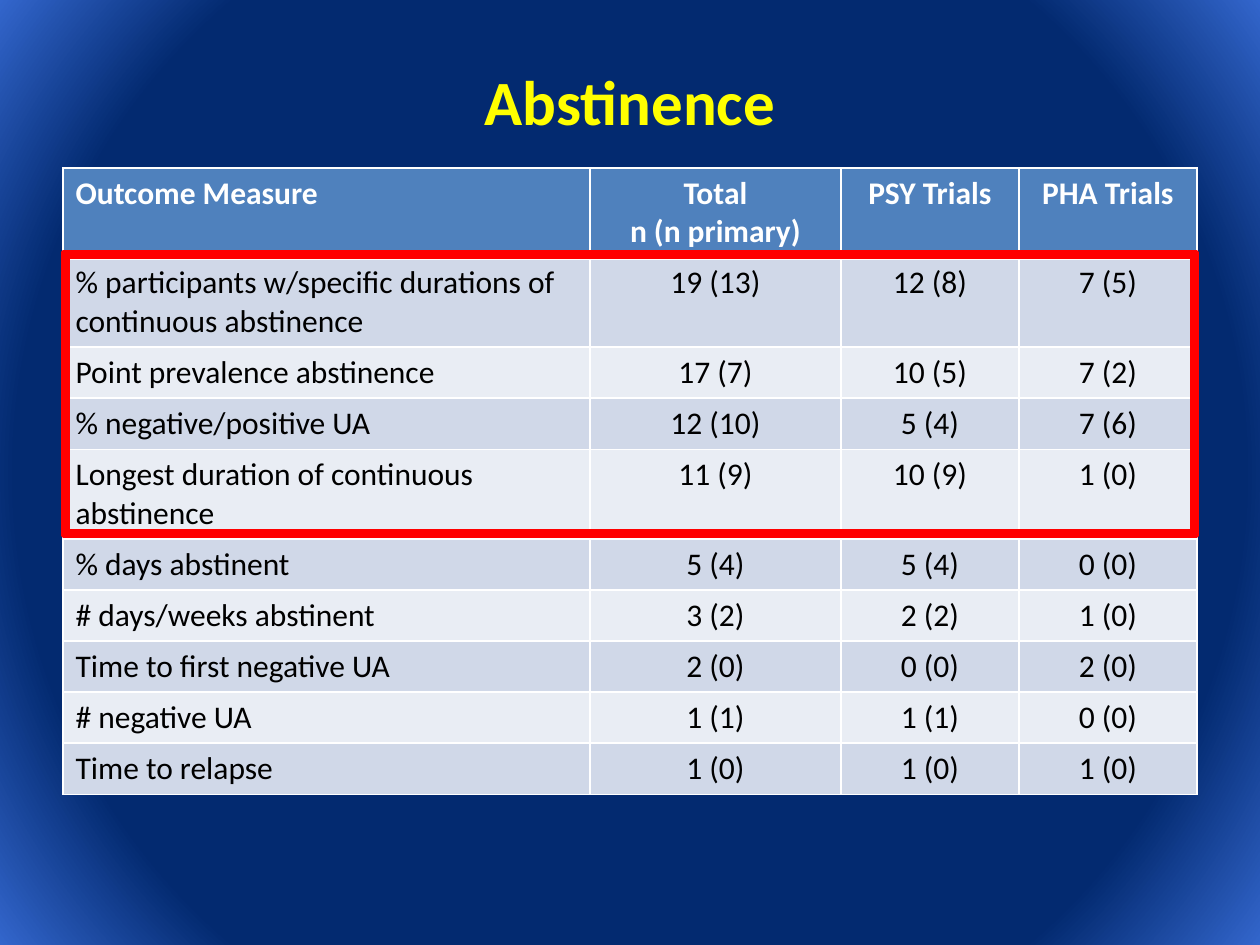
import pptx
import pptx.dml.color
import pptx.enum.dml
import pptx.enum.shapes
import pptx.enum.text
import pptx.oxml
import pptx.oxml.ns
import pptx.util

EMU_PER_PX = 914400 / 126
COLORS = {
    "navy": "032A70",
    "blue": "3366CC",
    "title": "FFFF00",
    "header": "4F81BD",
    "band_dark": "D0D8E8",
    "band_light": "E9EDF4",
    "white": "FFFFFF",
    "black": "000000",
    "highlight": "FF0000",
}
COLUMN_WIDTHS = [527, 251, 178, 178]
ROW_HEIGHT = 51
ROWS = [
    ["Outcome Measure", "Total\nn (n primary)", "PSY Trials", "PHA Trials"],
    ["% participants w/specific durations of continuous abstinence", "19 (13)", "12 (8)", "7 (5)"],
    ["Point prevalence abstinence", "17 (7)", "10 (5)", "7 (2)"],
    ["% negative/positive UA", "12 (10)", "5 (4)", "7 (6)"],
    ["Longest duration of continuous abstinence", "11 (9)", "10 (9)", "1 (0)"],
    ["% days abstinent", "5 (4)", "5 (4)", "0 (0)"],
    ["# days/weeks abstinent", "3 (2)", "2 (2)", "1 (0)"],
    ["Time to first negative UA", "2 (0)", "0 (0)", "2 (0)"],
    ["# negative UA", "1 (1)", "1 (1)", "0 (0)"],
    ["Time to relapse", "1 (0)", "1 (0)", "1 (0)"],
]


def px(length):
    return pptx.util.Emu(round(length * EMU_PER_PX))


def rgb(name):
    return pptx.dml.color.RGBColor.from_string(COLORS[name])


def format_text(frame, color, size, bold, centered):
    values = {"name": "Calibri", "size": pptx.util.Pt(size), "bold": bold}
    align = pptx.enum.text.PP_ALIGN
    for para in frame.paragraphs:
        para.alignment = align.CENTER if centered else align.LEFT
        for span in para.runs:
            for key, value in values.items():
                setattr(span.font, key, value)
            span.font.color.rgb = rgb(color)


def paint_background(page):
    fill = page.background.fill
    fill.gradient()
    for stop, (position, color) in zip(fill.gradient_stops, [(0.78, "navy"), (1, "blue")]):
        stop.position = position
        stop.color.rgb = rgb(color)
    gradient = page.element.find(".//" + pptx.oxml.ns.qn("a:gradFill"))
    gradient.remove(gradient.find(pptx.oxml.ns.qn("a:lin")))
    gradient.append(pptx.oxml.parse_xml(
        f'<a:path {pptx.oxml.ns.nsdecls("a")} path="circle">'
        '<a:fillToRect l="50000" t="50000" r="50000" b="50000"/></a:path>'
    ))


def place_title(page, left, top, width, height):
    title = page.shapes.title
    for key, value in {"left": left, "top": top, "width": width, "height": height}.items():
        setattr(title, key, px(value))
    title.text_frame.text = "Abstinence"
    title.text_frame.vertical_anchor = pptx.enum.text.MSO_ANCHOR.MIDDLE
    format_text(title.text_frame, "title", 36, True, True)


def border_cell(cell, is_header):
    properties = cell._tc.get_or_add_tcPr()
    for side in "LRTB":
        points = 3 if is_header and side == "B" else 1
        properties.append(pptx.oxml.parse_xml(
            f'<a:ln{side} {pptx.oxml.ns.nsdecls("a")} w="{pptx.util.Pt(points)}">'
            f'<a:solidFill><a:srgbClr val="{COLORS["white"]}"/></a:solidFill></a:ln{side}>'
        ))


def place_outcome_table(page, left, top, width, height):
    box = page.shapes.add_table(
        len(ROWS), len(COLUMN_WIDTHS), px(left), px(top), px(width), px(height)
    )
    table = box.table
    for column, column_width in zip(table.columns, COLUMN_WIDTHS):
        column.width = px(column_width)
    for row_index, texts in enumerate(ROWS):
        table.rows[row_index].height = px(ROW_HEIGHT)
        is_header = row_index == 0
        band = "band_dark" if row_index % 2 else "band_light"
        for column_index, text in enumerate(texts):
            cell = table.cell(row_index, column_index)
            cell.text = text
            border_cell(cell, is_header)
            cell.fill.solid()
            cell.fill.fore_color.rgb = rgb("header" if is_header else band)
            format_text(
                cell.text_frame, "white" if is_header else "black", 18, is_header, column_index > 0
            )
    box.height = px(height)


def place_highlight(page, left, top, width, height):
    frame = page.shapes.add_shape(
        pptx.enum.shapes.MSO_SHAPE.FRAME, px(left), px(top), px(width), px(height)
    )
    frame.adjustments[0] = 0.017
    frame.shadow.inherit = False
    for fill in (frame.fill, frame.line.fill):
        fill.solid()
        fill.fore_color.rgb = rgb("highlight")
    frame.line.width = pptx.util.Pt(2)


def main():
    deck = pptx.Presentation()
    deck.slide_width, deck.slide_height = px(1260), px(945)
    page = deck.slides.add_slide(deck.slide_layouts.get_by_name("Title Only"))
    paint_background(page)
    place_title(page, 63, 21, 1134, 158)
    place_outcome_table(page, 63, 168, sum(COLUMN_WIDTHS), 622)
    place_highlight(page, 63, 252, 1134, 284)
    deck.save("out.pptx")


if __name__ == "__main__":
    main()
